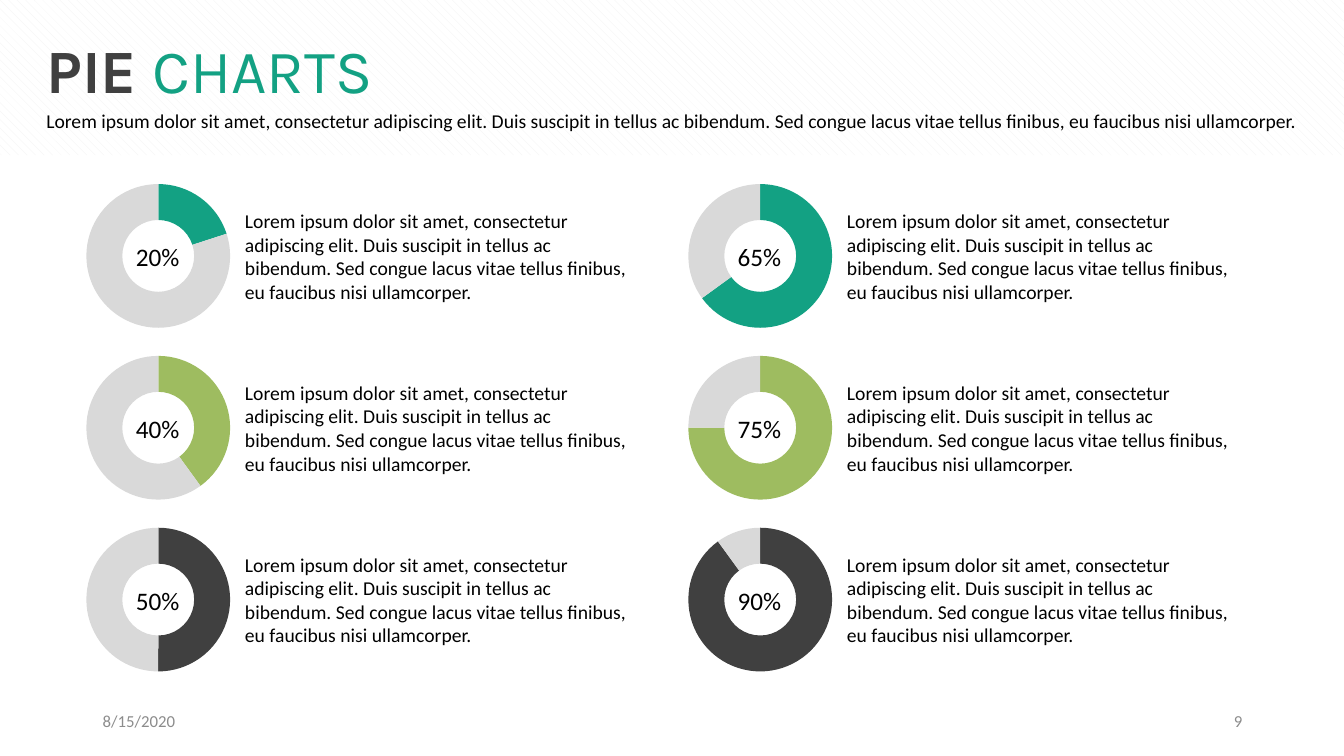
from dataclasses import dataclass
from typing import NamedTuple

from lxml import etree
from pptx import Presentation
from pptx.chart.data import CategoryChartData as Data
from pptx.dml.color import RGBColor
from pptx.enum.chart import XL_CHART_TYPE as Kind
from pptx.enum.dml import MSO_PATTERN as Pattern
from pptx.enum.shapes import MSO_SHAPE as Form
from pptx.enum.text import MSO_ANCHOR as Anchor, PP_ALIGN as Align
from pptx.oxml import parse_xml
from pptx.oxml.ns import nsdecls, qn
from pptx.util import Inches, Pt

WIDE, HIGH = Inches(13.33), Inches(7.5)
DARK, TEAL, GREEN = "404040", "13A183", "9EBC60"
PALE, MUTED, BLACK, WHITE = "D9D9D9", "8C8C8C", "000000", "FFFFFF"
LOREM = ("Lorem ipsum dolor sit amet, consectetur adipiscing elit. "
         "Duis suscipit in tellus ac bibendum. Sed congue lacus vitae "
         "tellus finibus, eu faucibus nisi ullamcorper.")


class Box(NamedTuple):
    """Left, top, width and height in percent of the slide."""
    x: float
    y: float
    w: float
    h: float

    def at(self) -> tuple[int, int, int, int]:
        return (int(WIDE * self.x / 100), int(HIGH * self.y / 100),
                int(WIDE * self.w / 100), int(HIGH * self.h / 100))


@dataclass
class Run:
    text: str
    size: float = 14
    tint: str = BLACK
    font: str = "Calibri"
    bold: bool = False


@dataclass
class Label:
    box: Box
    runs: list[Run]
    align: Align = Align.LEFT
    anchor: Anchor = Anchor.TOP
    inset: bool = False


@dataclass
class Ring:
    col: int
    row: int
    share: int
    tint: str

    def place(self, box: Box) -> Box:
        return box._replace(x=box.x + self.col * STEP_X,
                            y=box.y + self.row * STEP_Y)


# Grid of rings: the first cell, and the step to the next
STEP_X, STEP_Y = 44.79, 22.73
CHART = Box(5.25, 22.53, 13.05, 22.67)
DISC = Box(5.8, 23.4, 11.85, 21.07)
NOTE = Box(18.23, 27.6, 29.33, 12.53)
PLOT = {"x": 0.09, "y": 0.08, "w": 0.82, "h": 0.84}

RINGS = [Ring(col, row, share, tint)
         for col, shares in enumerate([(20, 40, 50), (65, 75, 90)])
         for row, (share, tint) in enumerate(zip(shares, (TEAL, GREEN, DARK)))]

LABELS = [
    Label(Box(3.45, 4.27, 93.17, 9.87),
          [Run("PIE ", 44, DARK, "Karla", True),
           Run("CHARTS", 44, TEAL, "Karla")]),
    Label(Box(3.45, 14.4, 93.17, 3.2), [Run(LOREM)]),
    Label(Box(6.9, 92.67, 22.5, 5.33), [Run("8/15/2020", 12, MUTED)],
          anchor=Anchor.MIDDLE, inset=True),
    Label(Box(70.67, 92.67, 22.5, 5.33), [Run("9", 12, MUTED)],
          Align.RIGHT, Anchor.MIDDLE, True),
]
LABELS += [Label(ring.place(NOTE), [Run(LOREM)], anchor=Anchor.MIDDLE)
           for ring in RINGS]


def hue(code: str) -> RGBColor:
    return RGBColor.from_string(code)


def write(frame, runs: list[Run], align: Align, anchor: Anchor) -> None:
    frame.word_wrap = True
    frame.vertical_anchor = anchor
    para = frame.paragraphs[0]
    para.alignment = align
    for item in runs:
        run = para.add_run()
        run.text = item.text
        font = run.font
        font.name, font.size, font.bold = item.font, Pt(item.size), item.bold
        font.color.rgb = hue(item.tint)


def add_form(slide, form: Form, box: Box):
    shape = slide.shapes.add_shape(form, *box.at())
    shape.shadow.inherit = False
    shape.line.fill.background()
    return shape


def add_label(slide, label: Label) -> None:
    frame = slide.shapes.add_textbox(*label.box.at()).text_frame
    if not label.inset:
        frame.margin_left = frame.margin_right = 0
        frame.margin_top = frame.margin_bottom = 0
    write(frame, label.runs, label.align, label.anchor)


def style_chart(root) -> None:
    # Clear background, fixed plot area and hole size
    root.find(qn("c:chart")).addnext(parse_xml(
        f'<c:spPr {nsdecls("c", "a")}><a:noFill/>'
        '<a:ln><a:noFill/></a:ln></c:spPr>'))
    area = next(root.iter(qn("c:plotArea")))
    for old in area.findall(qn("c:layout")):
        area.remove(old)
    layout = etree.Element(qn("c:layout"))
    manual = etree.SubElement(layout, qn("c:manualLayout"))
    parts = {"layoutTarget": "inner", "xMode": "edge", "yMode": "edge", **PLOT}
    for name, value in parts.items():
        etree.SubElement(manual, qn(f"c:{name}")).set("val", str(value))
    area.insert(0, layout)
    next(root.iter(qn("c:holeSize"))).set("val", "60")


def add_ring(slide, ring: Ring) -> None:
    # Disc with the share, under the ring
    disc = add_form(slide, Form.OVAL, ring.place(DISC))
    disc.fill.solid()
    disc.fill.fore_color.rgb = hue(WHITE)
    write(disc.text_frame, [Run(f"{ring.share}%", 18)],
          Align.CENTER, Anchor.MIDDLE)

    # Doughnut
    data = Data()
    data.categories = ["1", "2"]
    data.add_series("Series 1", (ring.share, 100 - ring.share))
    chart = slide.shapes.add_chart(
        Kind.DOUGHNUT, *ring.place(CHART).at(), data).chart
    chart.has_title = chart.has_legend = False
    chart.font.name, chart.font.size = "Calibri", Pt(10)
    chart.font.color.rgb = hue(BLACK)
    plot = chart.plots[0]
    plot.vary_by_categories = True
    for spot, tint in enumerate((ring.tint, PALE)):
        style = plot.series[0].points[spot].format
        style.fill.solid()
        style.fill.fore_color.rgb = hue(tint)
        style.line.fill.background()
    style_chart(chart.element)


def add_band(slide) -> None:
    fill = add_form(slide, Form.RECTANGLE, Box(0, 0, 100, 20.53)).fill
    fill.patterned()
    fill.pattern = Pattern.DASHED_DOWNWARD_DIAGONAL
    fill.fore_color.rgb = hue("F2F2F2")
    fill.back_color.rgb = hue(WHITE)


def main() -> None:
    deck = Presentation()
    deck.slide_width, deck.slide_height = WIDE, HIGH
    slide = deck.slides.add_slide(deck.slide_layouts[6])
    for ring in reversed(RINGS):
        add_ring(slide, ring)
    add_band(slide)
    for label in LABELS:
        add_label(slide, label)
    deck.save("out.pptx")


if __name__ == "__main__":
    main()
